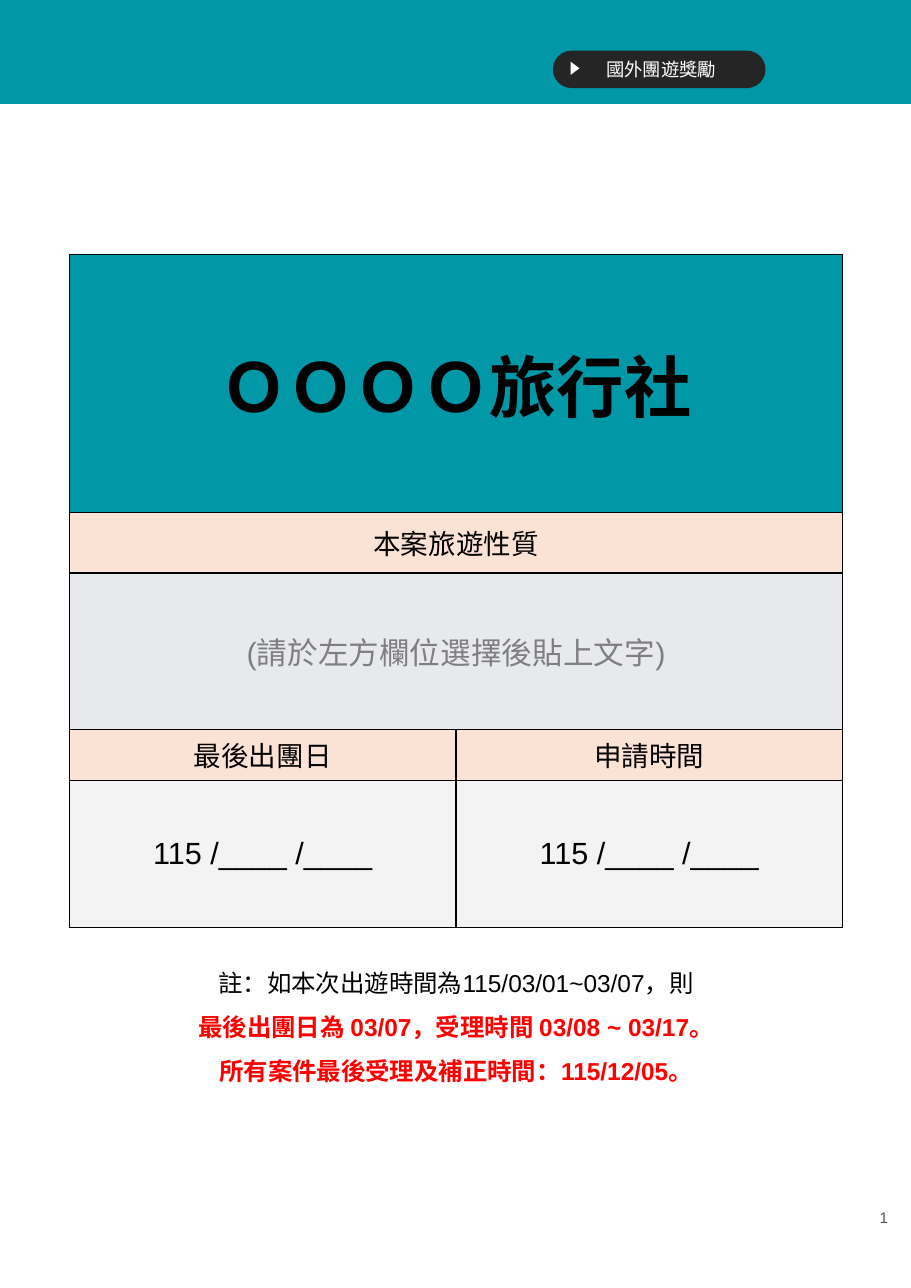
"""Build the cover page of an overseas group travel incentive application."""
from lxml import etree
from pptx import Presentation, util as u
from pptx.dml.color import RGBColor
from pptx.enum import shapes, text
from pptx.oxml import ns

TEAL, PEACH, BLACK, WHITE = "0097A7", "FAE2D5", "000000", "FFFFFF"
CENTER = text.PP_ALIGN.CENTER
MIDDLE = text.MSO_ANCHOR.MIDDLE


def paint(target, color):
    target.solid()
    target.fore_color.rgb = RGBColor.from_string(color)


def write(paragraph, words, size, color=BLACK, bold=False, align=CENTER):
    paragraph.alignment = align
    run = paragraph.add_run()
    run.text = words
    run.font.name = "Arial"
    run.font.size = u.Pt(size)
    run.font.bold = bold
    paint(run.font.fill, color)


deck = Presentation()
deck.slide_width, deck.slide_height = u.Inches(8.27), u.Inches(11.69)
page = deck.slides.add_slide(deck.slide_layouts[6])
margin, content_width = 0.63, 7.02

header = []
for preset, place, color in [
    (shapes.MSO_SHAPE.RECTANGLE, (-0.07, -0.05, 8.36, 0.99), TEAL),
    (shapes.MSO_SHAPE.ROUNDED_RECTANGLE, (5.02, 0.46, 1.93, 0.34), "252525"),
    (shapes.MSO_SHAPE.ISOSCELES_TRIANGLE, (5.16, 0.58, 0.12, 0.08), WHITE),
]:
    part = page.shapes.add_shape(preset, *map(u.Inches, place))
    part.shadow.inherit = False
    paint(part.fill, color)
    part.line.fill.background()
    header.append(part)

band, category, arrow = header
paint(band.line.fill, TEAL)
band.line.width = u.Pt(0.75)
arrow.rotation = 90
category.adjustments[0] = 0.5
category.text_frame.vertical_anchor = MIDDLE
category.text_frame.margin_top = category.text_frame.margin_bottom = u.Inches(0.1)
category_line = category.text_frame.paragraphs[0]
write(category_line, " ", 12, WHITE, True)
write(category_line, "國外團遊獎勵", 12, WHITE)

date_blank = "115 /____ /____"
form_rows = [
    (2.34, ["ＯＯＯＯ旅行社"], 44, BLACK, True, TEAL),
    (0.55, ["本案旅遊性質"], 18, BLACK, False, PEACH),
    (1.42, ["(請於左方欄位選擇後貼上文字)"], 20, "7F7F7F", False, "E7E9EC"),
    (0.45, ["最後出團日", "申請時間"], 18, BLACK, False, PEACH),
    (1.34, [date_blank, date_blank], 20, BLACK, False, "F3F3F3"),
]
form_height = sum(row[0] for row in form_rows)
form = page.shapes.add_table(
    len(form_rows), 2, u.Inches(margin), u.Inches(2.31),
    u.Inches(content_width), u.Inches(form_height)).table
form.first_row = form.horz_banding = False

for index, (height, labels, size, color, bold, fill) in enumerate(form_rows):
    form.rows[index].height = u.Inches(height)
    if len(labels) == 1:
        form.cell(index, 0).merge(form.cell(index, 1))
    for cell in form.rows[index].cells:
        properties = cell._tc.get_or_add_tcPr()
        for side in ("lnL", "lnR", "lnT", "lnB"):
            border = etree.SubElement(properties, ns.qn("a:" + side), w=str(u.Pt(1)))
            ink = etree.SubElement(border, ns.qn("a:solidFill"))
            etree.SubElement(ink, ns.qn("a:srgbClr"), val=BLACK)
        paint(cell.fill, fill)
        cell.vertical_anchor = MIDDLE
    for column, label in enumerate(labels):
        write(form.cell(index, column).text_frame.paragraphs[0], label, size, color, bold)

page_number = page.shapes.add_textbox(*map(u.Inches, (7.66, 10.6, 0.5, 0.89))).text_frame
page_number.word_wrap = True
page_number.vertical_anchor = MIDDLE
write(page_number.paragraphs[0], "1", 10, "595959", align=text.PP_ALIGN.RIGHT)

note = page.shapes.add_textbox(*map(u.Inches, (margin, 8.55, content_width, 1.28))).text_frame
note.word_wrap = True
note.auto_size = text.MSO_AUTO_SIZE.SHAPE_TO_FIT_TEXT
note.margin_top = note.margin_bottom = u.Inches(0.1)
for index, (words, color, bold) in enumerate([
    ("註：如本次出遊時間為115/03/01~03/07，則", BLACK, False),
    ("最後出團日為 03/07，受理時間 03/08 ~ 03/17。", "FF0000", True),
    ("所有案件最後受理及補正時間：115/12/05。", "FF0000", True),
]):
    note_line = note.add_paragraph() if index else note.paragraphs[0]
    note_line.line_spacing = 1.5
    write(note_line, words, 16, color, bold)

deck.save("out.pptx")
